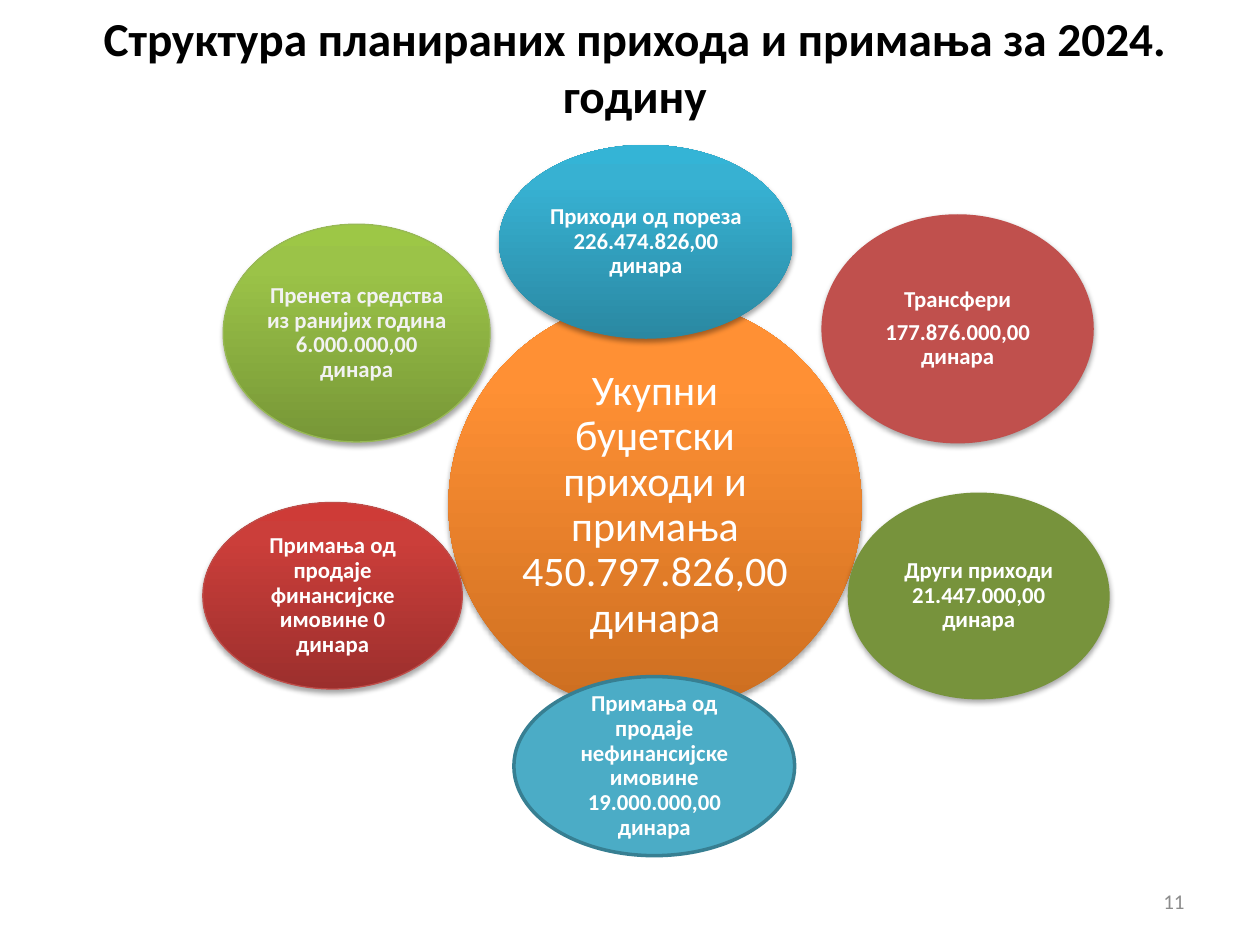
"""Build the slide on the structure of planned budget revenue for 2024."""
from lxml.etree import SubElement
from pptx import Presentation
from pptx.dml.color import RGBColor
from pptx.enum.shapes import MSO_SHAPE
from pptx.enum.text import MSO_ANCHOR, PP_ALIGN
from pptx.oxml.ns import qn
from pptx.util import Cm, Pt

BLACK = RGBColor(0x00, 0x00, 0x00)
WHITE = RGBColor(0xFF, 0xFF, 0xFF)
OFF_WHITE = RGBColor(0xF2, 0xF2, 0xF2)
GRAY = RGBColor(0x8C, 0x8C, 0x8C)
BRICK = RGBColor(0xC0, 0x50, 0x4D)
OLIVE = RGBColor(0x77, 0x93, 0x3C)
AQUA = RGBColor(0x4B, 0xAC, 0xC6)
AQUA_EDGE = RGBColor(0x37, 0x7F, 0x92)
RED_EDGE = RGBColor(0xBF, 0x4C, 0x48)
LIME_EDGE = RGBColor(0x98, 0xB9, 0x55)
ORANGE_SHADES = (RGBColor(0xCC, 0x6E, 0x20), RGBColor(0xFF, 0x90, 0x34), RGBColor(0xFF, 0x91, 0x36))
BLUE_SHADES = (RGBColor(0x2A, 0x88, 0xA2), RGBColor(0x37, 0xB1, 0xD2), RGBColor(0x34, 0xB4, 0xD6))
RED_SHADES = (RGBColor(0x9C, 0x2F, 0x2D), RGBColor(0xCB, 0x3E, 0x3A), RGBColor(0xCE, 0x3B, 0x37))
LIME_SHADES = (RGBColor(0x77, 0x97, 0x37), RGBColor(0x9B, 0xC3, 0x48), RGBColor(0x9D, 0xC7, 0x46))
STOPS = (0, 80, 100)

TITLE = "Структура планираних прихода и примања за 2024. годину"
PAGE = "11"
BUBBLES = [
    dict(text="Укупни буџетски приходи и примања 450.797.826,00 динара",
         box=(9.04, 6.02, 8.33, 8.33), fill=ORANGE_SHADES, size=24, bold=False),
    dict(text="Приходи од пореза 226.474.826,00 динара",
         box=(10.06, 2.92, 5.92, 3.91), fill=BLUE_SHADES),
    dict(text="Трансфери\n177.876.000,00 динара",
         box=(16.56, 4.32, 5.49, 4.62), fill=BRICK),
    dict(text="Други приходи 21.447.000,00 динара",
         box=(17.09, 9.93, 5.28, 4.17), fill=OLIVE),
    dict(text="Примања од продаје нефинансијске имовине 19.000.000,00 динара",
         box=(10.36, 13.64, 5.66, 3.61), fill=AQUA, line=(AQUA_EDGE, 2), shadow=False),
    dict(text="Примања од продаје финансијске имовине 0 динара",
         box=(4.09, 10.13, 5.23, 3.76), fill=RED_SHADES, line=(RED_EDGE, 0.75)),
    dict(text="Пренета средства из ранијих година 6.000.000,00 динара",
         box=(4.5, 4.52, 5.38, 4.39), fill=LIME_SHADES, line=(LIME_EDGE, 0.75),
         color=OFF_WHITE),
]


def write(sp, text, size=13, color=WHITE, bold=True, align=PP_ALIGN.CENTER,
          spacing=1.0, after=0, inset=None):
    tf = sp.text_frame
    tf.word_wrap = True
    tf.vertical_anchor = MSO_ANCHOR.MIDDLE
    if inset is not None:
        tf.margin_left = tf.margin_right = tf.margin_top = tf.margin_bottom = Cm(inset)
    for i, line in enumerate(text.split("\n")):
        p = tf.add_paragraph() if i else tf.paragraphs[0]
        p.alignment = align
        p.line_spacing = spacing
        p.space_after = Pt(after)
        r = p.add_run()
        r.text = line
        r.font.name = "Calibri"
        r.font.size = Pt(size)
        r.font.bold = bold
        r.font.color.rgb = color


def paint(sp, fill):
    if isinstance(fill, RGBColor):
        sp.fill.solid()
        sp.fill.fore_color.rgb = fill
        return
    sp.fill.gradient()
    sp.fill.gradient_angle = 90
    stops = sp._element.spPr.find(qn("a:gradFill")).find(qn("a:gsLst"))
    for gs in list(stops):
        stops.remove(gs)
    for pos, color in zip(STOPS, fill):
        gs = SubElement(stops, qn("a:gs"), pos=str(pos * 1000))
        SubElement(gs, qn("a:srgbClr"), val=str(color))


def add_shadow(sp):
    effects = sp._element.spPr.find(qn("a:effectLst"))
    outer = SubElement(effects, qn("a:outerShdw"), blurRad=str(Pt(3.1)),
                       dist=str(Pt(1.8)), dir="5400000", rotWithShape="0")
    color = SubElement(outer, qn("a:srgbClr"), val=str(BLACK))
    SubElement(color, qn("a:alpha"), val="35000")


def add_bubble(s, text, box, fill, line=None, shadow=True, size=13, **fmt):
    sp = s.shapes.add_shape(MSO_SHAPE.OVAL, *map(Cm, box))
    paint(sp, fill)
    if line:
        sp.line.color.rgb, sp.line.width = line[0], Pt(line[1])
    else:
        sp.line.fill.background()
    sp.shadow.inherit = False
    if shadow:
        add_shadow(sp)
    write(sp, text, size=size, spacing=0.9, after=size * 0.35, inset=0.05, **fmt)


def add_label(s, text, box, **fmt):
    write(s.shapes.add_textbox(*map(Cm, box)), text, **fmt)


def main():
    prs = Presentation()
    prs.slide_width, prs.slide_height = Cm(25.4), Cm(19.05)
    s = prs.slides.add_slide(prs.slide_layouts[6])
    add_label(s, TITLE, (1.37, 0.33, 22.86, 2.01), size=27, color=BLACK)
    add_label(s, PAGE, (18.21, 17.65, 5.92, 1.02), size=12, color=GRAY,
              bold=False, align=PP_ALIGN.RIGHT)
    for bubble in BUBBLES:
        add_bubble(s, **bubble)
    prs.save("out.pptx")


if __name__ == "__main__":
    main()
